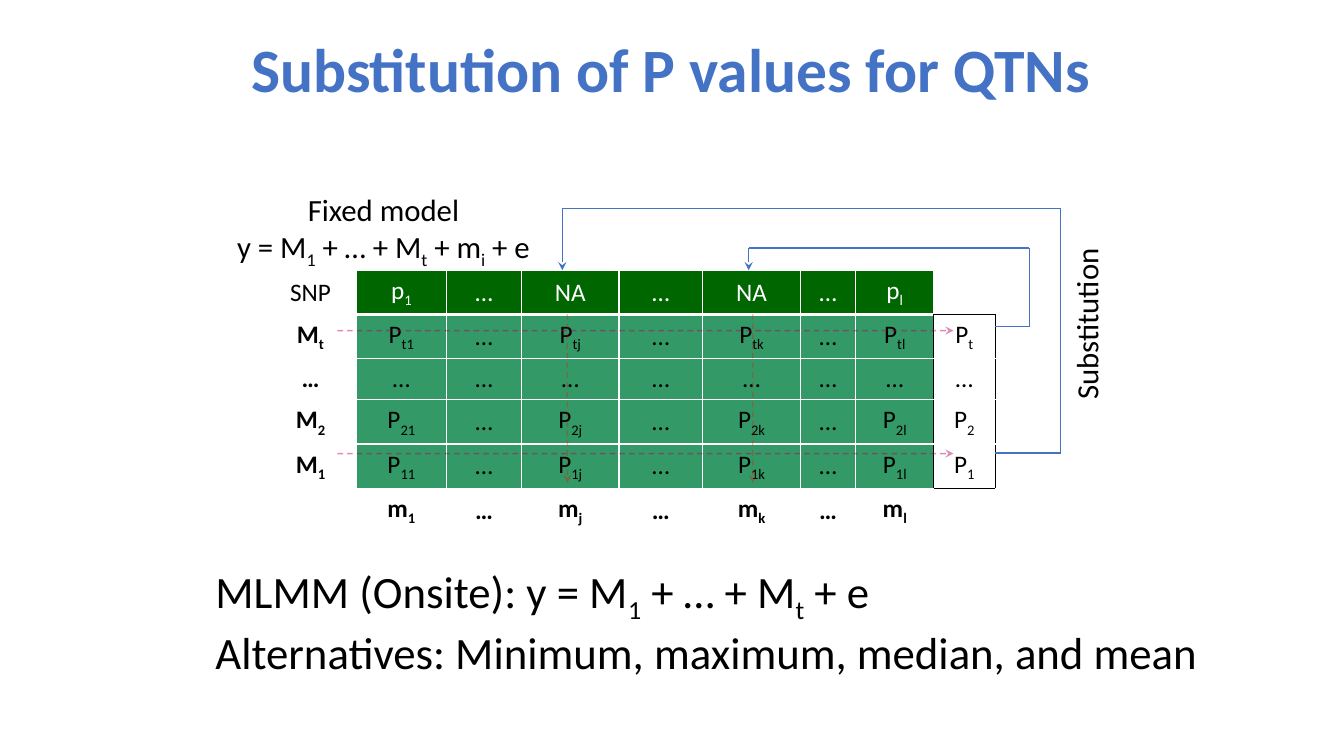
from itertools import pairwise, product

from lxml import etree
from pptx import Presentation
from pptx.dml.color import RGBColor
from pptx.enum.dml import MSO_LINE
from pptx.enum.shapes import MSO_CONNECTOR
from pptx.enum.text import MSO_ANCHOR, PP_ALIGN
from pptx.oxml.ns import qn
from pptx.util import Cm, Pt

STRAIGHT = MSO_CONNECTOR.STRAIGHT
DASH = MSO_LINE.DASH
MIDDLE, TOP = MSO_ANCHOR.MIDDLE, MSO_ANCHOR.TOP
LEFT, CENTER = PP_ALIGN.LEFT, PP_ALIGN.CENTER

COLORS = {
    "text": "000000",
    "white": "FFFFFF",
    "accent": "4472C4",
    "header": "006600",
    "body": "339966",
    "column trace": "FF0000",
    "row trace": "BA0066",
}
COLUMN_WIDTHS = [2.29, 2.29, 1.88, 2.46, 2.11, 2.46, 1.4, 1.96, 1.55]
ROW_HEIGHT = 1.03
MARKERS = ["1", "…", "j", "…", "k", "…", "l"]
COVARIATES = ["t", "…", "2", "1"]


def rgb(name):
    """Return the named colour."""
    return RGBColor.from_string(COLORS[name])


def write_para(para, text, size, color="text", bold=False, align=CENTER):
    """Write text whose parts between tildes are subscripts."""
    para.alignment = align
    for index, part in enumerate(text.split("~")):
        if not part:
            continue
        span = para.add_run()
        span.text = part
        formats = {"name": "Calibri", "size": Pt(size), "bold": bold}
        for name, value in formats.items():
            setattr(span.font, name, value)
        span.font.color.rgb = rgb(color)
        if index % 2:
            span.font._element.set("baseline", "-25000")


def add_text(page, box, lines, size, anchor=TOP, rotation=0, spacing=None, **style):
    """Add a text box with one paragraph for each line."""
    shape = page.shapes.add_textbox(*map(Cm, box))
    shape.rotation = rotation
    frame = shape.text_frame
    frame.word_wrap = True
    frame.vertical_anchor = anchor
    for index, line in enumerate(lines):
        para = frame.add_paragraph() if index else frame.paragraphs[0]
        para.line_spacing = spacing
        write_para(para, line, size, **style)


def add_line(page, start, end, color, arrow=False, dashed=False, opacity=100):
    """Draw a line whose arrowhead sits at its start."""
    line = page.shapes.add_connector(STRAIGHT, *map(Cm, (*start, *end)))
    etree.SubElement(line._element.spPr, qn("a:effectLst"))
    line.line.color.rgb = rgb(color)
    line.line.width = Pt(1)
    if dashed:
        line.line.dash_style = DASH
    outline = line.line._get_or_add_ln()
    if opacity < 100:
        tone = outline.find(".//" + qn("a:srgbClr"))
        etree.SubElement(tone, qn("a:alpha"), val=str(opacity * 1000))
    if arrow:
        etree.SubElement(outline, qn("a:headEnd"), type="stealth")


def set_borders(cell, borders):
    """Put left, right, top and bottom borders on a cell."""
    properties = cell._tc.get_or_add_tcPr()
    for index, (side, (color, width)) in enumerate(borders.items()):
        edge = etree.Element(qn("a:ln" + side), w=str(Pt(width)))
        fill = etree.SubElement(edge, qn("a:solidFill"))
        etree.SubElement(fill, qn("a:srgbClr"), val=COLORS[color])
        properties.insert(index, edge)


def subscripted(letter, index):
    """Join a letter to its subscript, or keep an ellipsis alone."""
    return "…" if "…" in index else f"{letter}~{index}~"


def table_texts():
    """Return the rows of the table of P values."""
    header = [subscripted("p", m) if m in "1l" else "NA" for m in MARKERS]
    header = ["…" if m == "…" else text for m, text in zip(MARKERS, header)]
    rows = [["SNP", *header, ""]]
    for covariate in COVARIATES:
        values = [subscripted("P", covariate + m) for m in MARKERS]
        rows.append([subscripted("M", covariate), *values, subscripted("P", covariate)])
    return rows + [["", *[subscripted("m", m) for m in MARKERS], ""]]


def cell_borders(row, column):
    """Outline the last column in black and all other cells in white."""
    borders = {side: ("white", 1) for side in "LRTB"}
    if row == 0:
        borders["B"] = ("white", 3)
    black = ""
    if 1 <= row <= 4:
        black = {7: "R", 8: "LR"}.get(column, "")
    if column == 8:
        black += {0: "B", 1: "T", 4: "B", 5: "T"}.get(row, "")
    return borders | {side: ("text", 1) for side in black}


def add_p_values(page, box):
    """Add the table of P values."""
    texts = table_texts()
    frame = page.shapes.add_table(len(texts), len(COLUMN_WIDTHS), *map(Cm, box))
    table = frame.table
    table.first_row = table.horz_banding = False
    for column, width in zip(table.columns, COLUMN_WIDTHS):
        column.width = Cm(width)
    for row in table.rows:
        row.height = Cm(ROW_HEIGHT)
    for row, column in product(range(len(texts)), range(len(COLUMN_WIDTHS))):
        cell = table.cell(row, column)
        cell.vertical_anchor = MIDDLE
        filled = row < 5 and 1 <= column <= 7
        if filled:
            cell.fill.solid()
            cell.fill.fore_color.rgb = rgb("body" if row else "header")
        else:
            cell.fill.background()
        color = "white" if filled and row == 0 else "text"
        bold = row == 5 or (column == 0 and row > 0)
        para = cell.text_frame.paragraphs[0]
        write_para(para, texts[row][column], 18, color, bold)
        set_borders(cell, cell_borders(row, column))


def add_substitution(page, box):
    """Add the loops from the last column to the NA cells, with their label."""
    left, top, width, _ = box
    loops = [(12.19, 0.56, 0.86, 1.42), (7.49, 1.55, 1.65, 4.6)]
    for offset, lift, reach, depth in loops:
        target, edge = left + offset, left + width
        corners = [
            (target, top),
            (target, top - lift),
            (edge + reach, top - lift),
            (edge + reach, top + depth),
            (edge, top + depth),
        ]
        for index, (start, end) in enumerate(pairwise(corners)):
            add_line(page, start, end, "accent", arrow=index == 0)
    label = (left + 17.42, top + 0.76, 6.55, 1.19)
    add_text(page, label, ["Substitution"], 22, rotation=270)


def add_traces(page, box):
    """Add the dashed arrows down the columns and along the rows."""
    left, top, _, _ = box
    for x in (left + 12.29, left + 7.62):
        add_line(page, (x, top + 5.36), (x, top + 1.07), "column trace", True, True, 30)
    for y in (top + 1.52, top + 4.62):
        add_line(page, (left + 17.35, y), (left + 1.78, y), "row trace", True, True, 45)


def add_diagram(page, box):
    """Add the table with its model, loops and traces."""
    left, top, _, _ = box
    add_p_values(page, box)
    add_substitution(page, box)
    model = ["Fixed model", "y = M~1~ + … + M~t~ + m~i~ + e"]
    add_text(page, (left - 1.5, top - 2.13, 8.97, 2.13), model, 22)
    add_traces(page, box)


def add_summary(page, box):
    """Add the two large lines below the table."""
    left, top, width, height = box
    lines = ["MLMM (Onsite): y = M~1~ + … + M~t~ + e",
             "Alternatives: Minimum, maximum, median, and mean"]
    for index, line in enumerate(lines):
        line_box = (left, top + index * 1.55, width, height / 2)
        add_text(page, line_box, [line], 32, align=LEFT)


def main():
    """Build and save the deck."""
    deck = Presentation()
    deck.slide_width, deck.slide_height = Cm(33.87), Cm(19.05)
    page = deck.slides.add_slide(deck.slide_layouts[6])
    add_diagram(page, (6.68, 6.81, sum(COLUMN_WIDTHS), 6 * ROW_HEIGHT))
    add_text(page, (2.31, 0, 29.21, 3.68), ["Substitution of P values for QTNs"], 44,
             anchor=MIDDLE, spacing=0.9, color="accent", bold=True)
    add_summary(page, (5.18, 14.07, 25.35, 3.26))
    deck.save("out.pptx")


if __name__ == "__main__":
    main()
